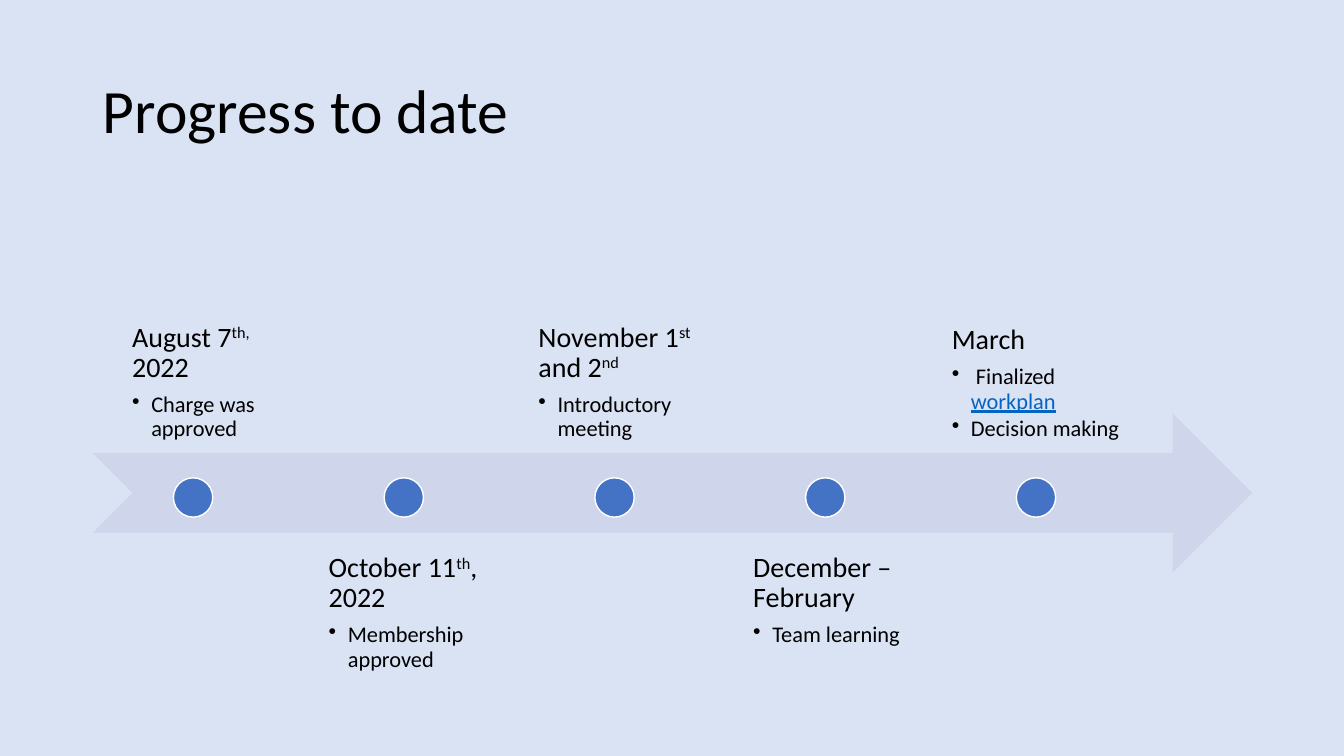
from pptx import Presentation
from pptx.dml.color import RGBColor
from pptx.enum.shapes import MSO_SHAPE
from pptx.enum.text import MSO_ANCHOR, PP_ALIGN
from pptx.util import Inches, Pt
from lxml.etree import SubElement
from pptx.oxml.ns import qn

PALE = RGBColor(0xDA, 0xE3, 0xF3)
BAND = RGBColor(0xCF, 0xD5, 0xEA)
BLUE = RGBColor(0x44, 0x72, 0xC4)
LINK = RGBColor(0x05, 0x63, 0xC1)
WHITE = RGBColor(0xFF, 0xFF, 0xFF)
BLACK = RGBColor(0, 0, 0)

STOPS = [
    ("August 7|th, |2022", ["Charge was approved"], 0.39),
    ("October 11|th|, 2022", ["Membership approved"], 0.25),
    ("November 1|st| and 2|nd", ["Introductory meeting"], 0.24),
    ("December – February", ["Team learning"], 0.28),
    ("March", [" Finalized |workplan", "Decision making"], 0.16),
]
STEP = 2.09


def style(para, size, after=0):
    para.alignment = PP_ALIGN.LEFT
    para.line_spacing = 0.9
    para.space_after = Pt(after)
    para.font.name = "Calibri"
    para.font.size = Pt(size)
    para.font.color.rgb = BLACK


deck = Presentation()
deck.slide_width = Inches(13.33)
deck.slide_height = Inches(7.5)
slide = deck.slides.add_slide(deck.slide_layouts[5])
slide.background.fill.solid()
slide.background.fill.fore_color.rgb = PALE

title = slide.shapes.title
title.left, title.top = Inches(0.92), Inches(0.4)
title.width, title.height = Inches(11.5), Inches(1.45)
title.text_frame.text = "Progress to date"
title.text_frame.vertical_anchor = MSO_ANCHOR.MIDDLE
style(title.text_frame.paragraphs[0], 44)

arrow = slide.shapes.add_shape(
    MSO_SHAPE.NOTCHED_RIGHT_ARROW, Inches(0.92), Inches(4.1), Inches(11.5), Inches(1.58))
arrow.shadow.inherit = False
arrow.fill.solid()
arrow.fill.fore_color.rgb = BAND
arrow.line.fill.background()

for i, (date, notes, inset) in enumerate(STOPS):
    above = i % 2 == 0
    box = slide.shapes.add_textbox(
        Inches(0.92 + i * STEP), Inches(2.96 if above else 5.33), Inches(1.99), Inches(1.58))
    frame = box.text_frame
    frame.word_wrap = True
    frame.vertical_anchor = MSO_ANCHOR.BOTTOM if above else MSO_ANCHOR.TOP
    frame.margin_left, frame.margin_right = Inches(inset), Inches(0.1)
    frame.margin_top = frame.margin_bottom = Inches(0.16)

    head = frame.paragraphs[0]
    style(head, 20, 7)
    for n, part in enumerate(date.split("|")):
        run = head.add_run()
        run.text = part
        if n % 2:
            run._r.get_or_add_rPr().set("baseline", "30000")

    for note in notes:
        item = frame.add_paragraph()
        item.level = 1
        style(item, 16, 2.4)
        props = item._p.get_or_add_pPr()
        props.set("marL", str(Inches(0.19)))
        props.set("indent", str(-Inches(0.19)))
        bullet = SubElement(props, qn("a:buChar"), char="•")
        props.find(qn("a:defRPr")).addprevious(bullet)
        for n, part in enumerate(note.split("|")):
            run = item.add_run()
            run.text = part
            if n % 2:
                run.font.underline = True
                run.font.color.rgb = LINK

    dot = slide.shapes.add_shape(
        MSO_SHAPE.OVAL, Inches(1.72 + i * STEP), Inches(4.74), Inches(0.39), Inches(0.39))
    dot.shadow.inherit = False
    dot.fill.solid()
    dot.fill.fore_color.rgb = BLUE
    dot.line.color.rgb = WHITE
    dot.line.width = Pt(1)

deck.save("out.pptx")
